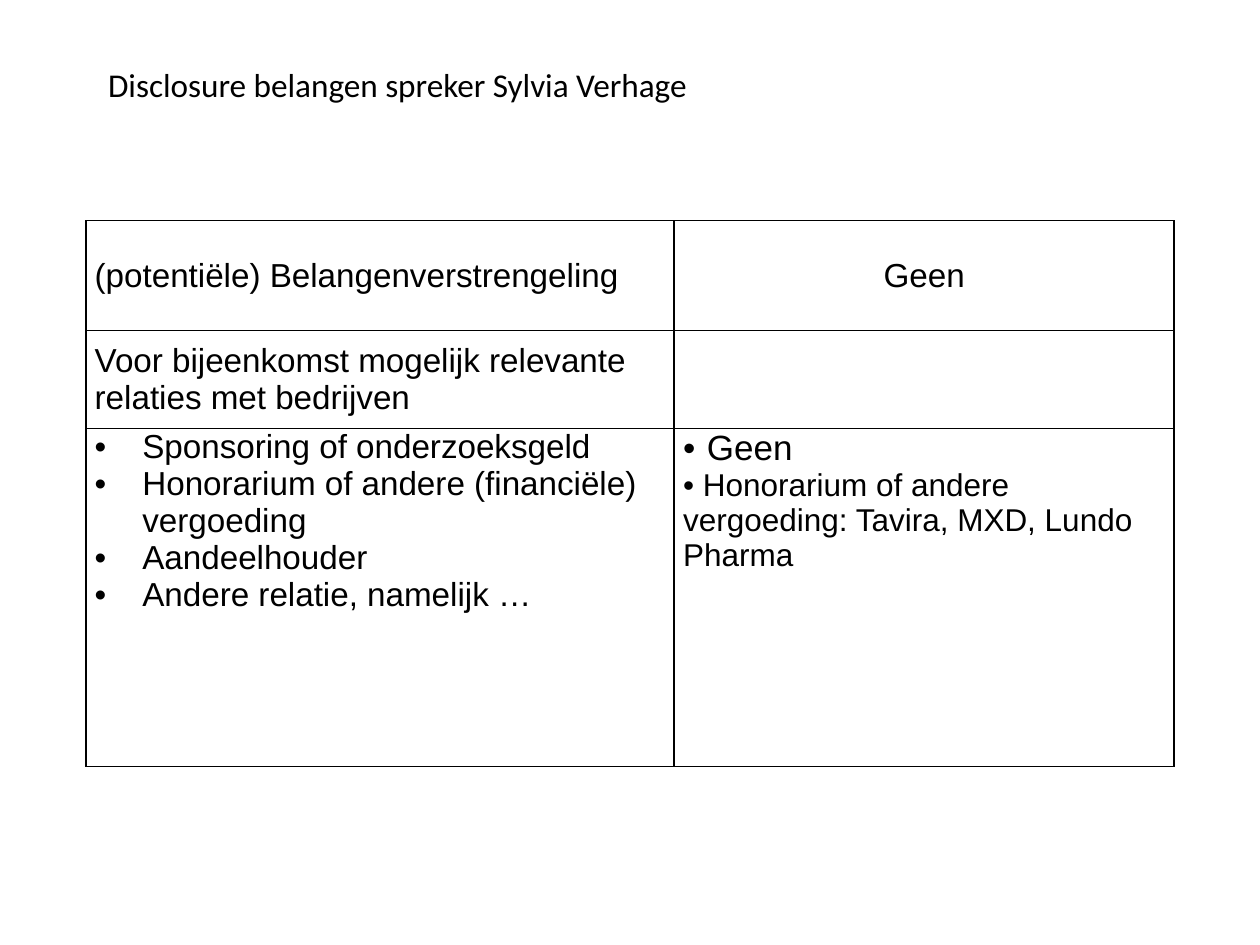
from lxml import etree
from pptx import Presentation
from pptx import util as u
from pptx.dml.color import RGBColor
from pptx.enum import text
from pptx.oxml import ns

COLOURS = {"ink": "000000", "paper": "FFFFFF"}
LEFT, CENTRE = text.PP_ALIGN.LEFT, text.PP_ALIGN.CENTER
TOP, MIDDLE = text.MSO_ANCHOR.TOP, text.MSO_ANCHOR.MIDDLE


class SlideBuilder:
    def __init__(self, deck):
        self.page = deck.slides.add_slide(deck.slide_layouts[6])
        self.ink = RGBColor.from_string(COLOURS["ink"])
        self.paper = RGBColor.from_string(COLOURS["paper"])

    def paragraph(self, para, words, size=19, name="Arial", align=LEFT, indent=None):
        """Write one paragraph; an indent in cm gives it a hanging bullet."""
        para.add_run().text = words
        para.alignment = align
        if indent:
            props = para._p.get_or_add_pPr()
            props.set("marL", str(u.Cm(indent)))
            props.set("indent", str(-u.Cm(indent)))
            etree.SubElement(props, ns.qn("a:buFont"), typeface="Arial")
            etree.SubElement(props, ns.qn("a:buChar"), char="•")
        para.font.size = u.Pt(size)
        para.font.name = name
        para.font.color.rgb = self.ink

    def title(self, words, left, top, width, height):
        box = self.page.shapes.add_textbox(*map(u.Cm, (left, top, width, height)))
        frame = box.text_frame
        frame.word_wrap = True
        frame.margin_left = frame.margin_right = frame.margin_top = frame.margin_bottom = 0
        self.paragraph(frame.paragraphs[0], words, name="Calibri")

    def borders(self, cell):
        props = cell._tc.get_or_add_tcPr()
        for side in ("lnL", "lnR", "lnT", "lnB"):
            line = etree.SubElement(props, ns.qn(f"a:{side}"), w=str(u.Pt(1)))
            fill = etree.SubElement(line, ns.qn("a:solidFill"))
            etree.SubElement(fill, ns.qn("a:srgbClr"), val=COLOURS["ink"])

    def table(self, left, top, widths, heights, rows):
        """Each cell is (anchor, list of paragraph settings)."""
        place = map(u.Cm, (left, top, sum(widths), sum(heights)))
        table = self.page.shapes.add_table(len(rows), len(widths), *place).table
        table.first_row = table.horz_banding = False
        for column, width in zip(table.columns, widths):
            column.width = u.Cm(width)
        for row, height, cells in zip(table.rows, heights, rows):
            row.height = u.Cm(height)
            for cell, (anchor, paragraphs) in zip(row.cells, cells):
                self.borders(cell)
                cell.fill.solid()
                cell.fill.fore_color.rgb = self.paper
                cell.vertical_anchor = anchor
                cell.margin_left = cell.margin_right = u.Cm(0.18)
                cell.margin_top = cell.margin_bottom = 0
                frame = cell.text_frame
                for index, settings in enumerate(paragraphs):
                    para = frame.add_paragraph() if index else frame.paragraphs[0]
                    self.paragraph(para, **settings)


def main():
    deck = Presentation()
    deck.slide_width, deck.slide_height = u.Cm(25.4), u.Cm(19.05)
    builder = SlideBuilder(deck)

    # Title
    builder.title("Disclosure belangen spreker Sylvia Verhage", 2.18, 1.3, 22.86, 2.64)

    # Disclosure table
    relations = [
        "Sponsoring of onderzoeksgeld",
        "Honorarium of andere (financiële) vergoeding",
        "Aandeelhouder",
        "Andere relatie, namelijk …",
    ]
    answers = [
        dict(words="Geen", size=20, indent=0.48),
        dict(words="• Honorarium of andere vergoeding: Tavira, MXD, Lundo Pharma", size=18),
    ]
    rows = [
        [(MIDDLE, [dict(words="(potentiële) Belangenverstrengeling")]),
         (MIDDLE, [dict(words="Geen", align=CENTRE)])],
        [(MIDDLE, [dict(words="Voor bijeenkomst mogelijk relevante relaties met bedrijven")]),
         (MIDDLE, [])],
        [(TOP, [dict(words=words, indent=0.96) for words in relations]),
         (TOP, answers)],
    ]
    builder.table(1.73, 4.45, [11.86, 10.08], [2.21, 1.98, 6.81], rows)

    deck.save("out.pptx")


if __name__ == "__main__":
    main()
